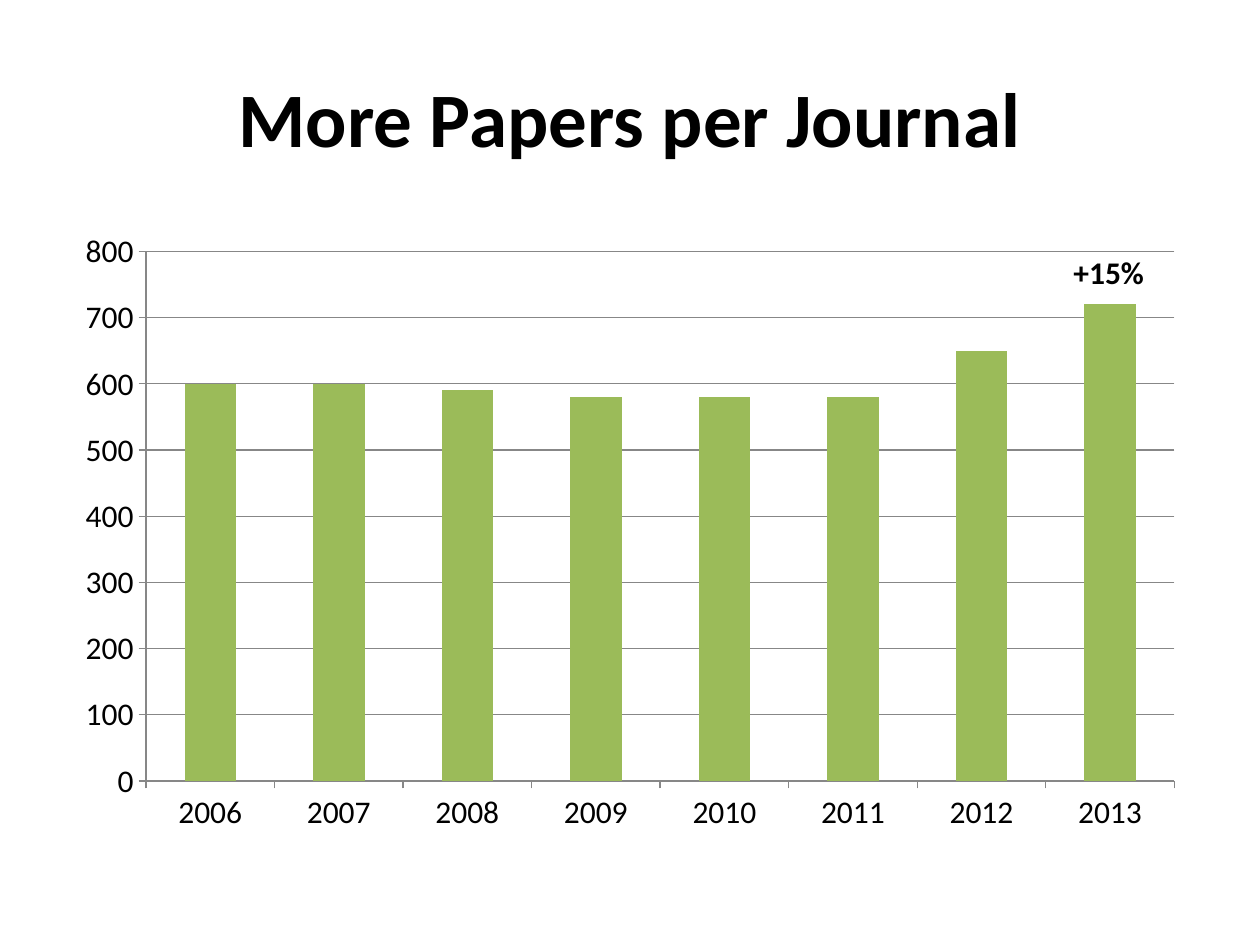
from pptx import Presentation
from pptx.chart.data import CategoryChartData
from pptx.dml.color import RGBColor
from pptx.enum.chart import XL_CHART_TYPE, XL_TICK_MARK
from pptx.enum.text import MSO_ANCHOR, MSO_AUTO_SIZE, PP_ALIGN
from pptx.util import Emu, Pt

PX = 914400 / 126
COLORS = {"text": "000000", "bar": "9BBB59", "line": "878787"}
YEARS = [str(year) for year in range(2006, 2014)]
PAPERS = [600, 600, 590, 580, 580, 580, 650, 720]


def px(n):
    return Emu(round(n * PX))


def rgb(name):
    return RGBColor.from_string(COLORS[name])


class SlideBuilder:
    """Hold the text style and the current slide, and add its elements."""

    def __init__(self, prs, font="Calibri"):
        self.font = font
        self.s = prs.slides.add_slide(prs.slide_layouts[5])

    def style(self, font, size, bold=False):
        font.name = self.font
        font.size = Pt(size)
        font.bold = bold
        font.color.rgb = rgb("text")

    def title(self, text, x, y, w, h):
        sp = self.s.shapes.title
        sp.left, sp.top, sp.width, sp.height = map(px, (x, y, w, h))
        tf = sp.text_frame
        tf.text = text
        tf.vertical_anchor = MSO_ANCHOR.MIDDLE
        p = tf.paragraphs[0]
        p.alignment = PP_ALIGN.CENTER
        self.style(p.runs[0].font, 44, bold=True)

    def column_chart(self, cats, vals, x, y, w, h):
        data = CategoryChartData()
        data.categories = cats
        data.add_series("Series 1", vals)
        chart = self.s.shapes.add_chart(
            XL_CHART_TYPE.COLUMN_CLUSTERED, *map(px, (x, y, w, h)), data
        ).chart
        chart.has_legend = False
        chart.has_title = False
        self.style(chart.font, 18)

        plot = chart.plots[0]
        plot.gap_width = 150
        plot.vary_by_categories = False
        fill = plot.series[0].format.fill
        fill.solid()
        fill.fore_color.rgb = rgb("bar")

        axis = chart.value_axis
        axis.minimum_scale, axis.maximum_scale, axis.major_unit = 0, 800, 100
        axis.has_major_gridlines = True
        axis.tick_labels.number_format = "0"
        axis.tick_labels.number_format_is_linked = False
        for ax in (axis, chart.category_axis):
            ax.major_tick_mark = XL_TICK_MARK.OUTSIDE
            ax.minor_tick_mark = XL_TICK_MARK.NONE
        for part in (axis, chart.category_axis, axis.major_gridlines):
            part.format.line.color.rgb = rgb("line")
            part.format.line.width = Pt(0.75)

    def label(self, text, x, y, w, h):
        tf = self.s.shapes.add_textbox(*map(px, (x, y, w, h))).text_frame
        tf.text = text
        tf.word_wrap = False
        tf.auto_size = MSO_AUTO_SIZE.SHAPE_TO_FIT_TEXT
        self.style(tf.paragraphs[0].runs[0].font, 18, bold=True)


def main():
    prs = Presentation()
    prs.slide_width, prs.slide_height = px(1260), px(945)
    slide = SlideBuilder(prs)
    slide.title("More Papers per Journal", 63, 38, 1134, 158)
    slide.column_chart(YEARS, PAPERS, 63, 220, 1134, 624)
    slide.label("+15%", 1061, 247, 96, 50)
    prs.save("out.pptx")


if __name__ == "__main__":
    main()
